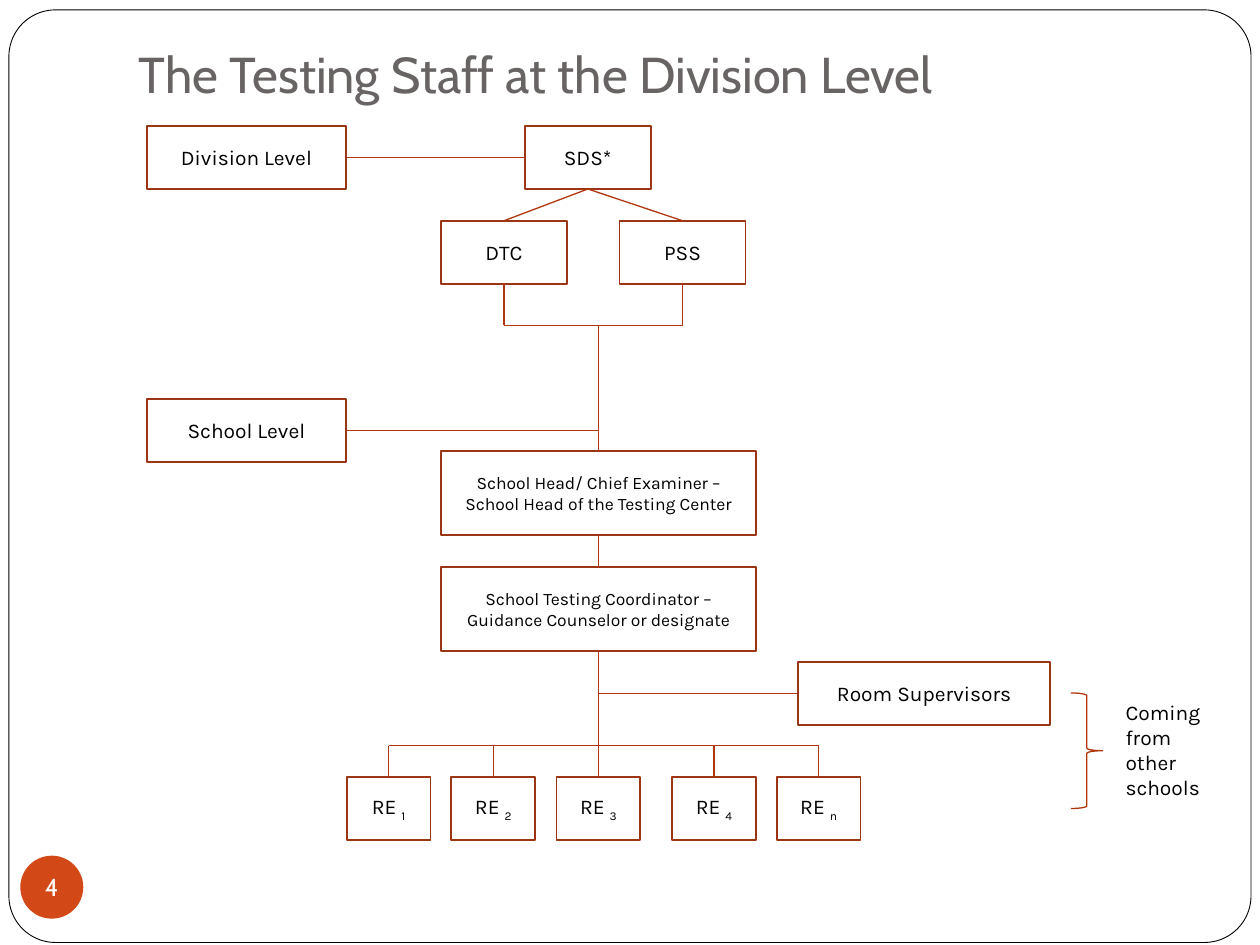
from lxml.etree import SubElement
from pptx import Presentation
from pptx.dml.color import RGBColor
from pptx.enum.shapes import MSO_CONNECTOR, MSO_SHAPE
from pptx.enum.text import MSO_ANCHOR, MSO_AUTO_SIZE, PP_ALIGN
from pptx.oxml.ns import qn
from pptx.util import Cm, Pt

WHITE = RGBColor(0xFF, 0xFF, 0xFF)
BLACK = RGBColor(0x00, 0x00, 0x00)
TITLE_GREY = RGBColor(0x69, 0x64, 0x64)
BADGE_ORANGE = RGBColor(0xD3, 0x48, 0x17)
BOX_BROWN = RGBColor(0x9C, 0x35, 0x11)
LINK_RED = RGBColor(0xB1, 0x36, 0x0B)
HEADING_FONT = "Cabin"
BODY_FONT = "Karla"
BOX_HEIGHT = 1.27


def add_run(paragraph, text, size, font=BODY_FONT, color=BLACK):
    """Append a formatted run to a paragraph."""
    run = paragraph.add_run()
    run.text = text
    run.font.size = Pt(size)
    run.font.name = font
    run.font.color.rgb = color
    return run


def add_outline(slide, preset, left, top, width, height, color, weight):
    """Add an unfilled preset shape with a plain outline."""
    outline = slide.shapes.add_shape(preset, Cm(left), Cm(top), Cm(width), Cm(height))
    outline.shadow.inherit = False
    outline.fill.background()
    outline.line.color.rgb = color
    outline.line.width = Pt(weight)
    return outline


def add_box(slide, left, top, width, height, lines, size=12, subscript=None):
    """Add a chart box with centred lines and an optional subscript."""
    box = add_outline(slide, MSO_SHAPE.RECTANGLE, left, top, width, height, BOX_BROWN, 1)
    frame = box.text_frame
    frame.word_wrap = True
    frame.vertical_anchor = MSO_ANCHOR.MIDDLE
    for index, line in enumerate(lines):
        paragraph = frame.add_paragraph() if index else frame.paragraphs[0]
        paragraph.alignment = PP_ALIGN.CENTER
        add_run(paragraph, line, size)
    if subscript:
        index_run = add_run(paragraph, subscript, size)
        index_run.font._element.set("baseline", "-25000")
    return box


def add_link(slide, start, end):
    """Add a straight link between two points."""
    link = slide.shapes.add_connector(MSO_CONNECTOR.STRAIGHT, *start, *end)
    link.line.color.rgb = LINK_RED
    link.line.width = Pt(0.75)
    SubElement(link._element.spPr, qn("a:effectLst"))


def top_of(box):
    """Return the middle of a box's top edge."""
    return box.left + box.width // 2, box.top


def bottom_of(box):
    """Return the middle of a box's bottom edge."""
    return box.left + box.width // 2, box.top + box.height


def left_of(box):
    """Return the middle of a box's left edge."""
    return box.left, box.top + box.height // 2


def right_of(box):
    """Return the middle of a box's right edge."""
    return box.left + box.width, box.top + box.height // 2


def add_frame(slide):
    """Add the rounded slide frame."""
    frame = add_outline(slide, MSO_SHAPE.ROUNDED_RECTANGLE, 0.18, 0.2, 25.04, 18.8, BLACK, 0.5)
    frame.adjustments[0] = 0.05
    frame.fill.solid()
    frame.fill.fore_color.rgb = WHITE
    slide.shapes._spTree.insert(2, frame._element)


def set_title(slide, text):
    """Place and fill the title placeholder."""
    title = slide.shapes.title
    title.left, title.top, title.width, title.height = Cm(2.54), Cm(0.23), Cm(19.89), Cm(2.1)
    frame = title.text_frame
    frame.auto_size = MSO_AUTO_SIZE.NONE
    frame.vertical_anchor = MSO_ANCHOR.BOTTOM
    frame.margin_bottom = Cm(0.25)
    frame.paragraphs[0].alignment = PP_ALIGN.LEFT
    add_run(frame.paragraphs[0], text, 28.8, HEADING_FONT, TITLE_GREY)


def add_badge(slide, number):
    """Add the round page number badge."""
    badge = slide.shapes.add_shape(MSO_SHAPE.OVAL, Cm(0.41), Cm(17.25), Cm(1.27), Cm(1.27))
    badge.shadow.inherit = False
    badge.fill.solid()
    badge.fill.fore_color.rgb = BADGE_ORANGE
    badge.line.fill.background()
    frame = badge.text_frame
    frame.margin_left = frame.margin_right = frame.margin_top = frame.margin_bottom = 0
    frame.word_wrap = False
    frame.vertical_anchor = MSO_ANCHOR.MIDDLE
    frame.paragraphs[0].alignment = PP_ALIGN.CENTER
    add_run(frame.paragraphs[0], number, 14, HEADING_FONT, WHITE)


def add_division_level(slide, trunk_x):
    """Add the division staff and return the height where the trunk starts."""
    level = add_box(slide, 2.96, 2.54, 4.02, BOX_HEIGHT, ["Division Level"])
    superintendent = add_box(slide, 10.58, 2.54, 2.54, BOX_HEIGHT, ["SDS*"])
    coordinator = add_box(slide, 8.89, 4.45, 2.54, BOX_HEIGHT, ["DTC"])
    supervisor = add_box(slide, 12.49, 4.45, 2.54, BOX_HEIGHT, ["PSS"])
    join_y = Cm(6.56)
    add_link(slide, right_of(level), left_of(superintendent))
    for member in (coordinator, supervisor):
        add_link(slide, bottom_of(superintendent), top_of(member))
        add_link(slide, bottom_of(member), (bottom_of(member)[0], join_y))
        add_link(slide, (bottom_of(member)[0], join_y), (trunk_x, join_y))
    return join_y


def add_examiners(slide, trunk_x, bus_y):
    """Add the room examiners hanging from a shared bus line."""
    lefts = (6.99, 9.1, 11.22, 13.55, 15.66)
    examiners = [
        add_box(slide, left, 15.66, 1.69, BOX_HEIGHT, ["RE "], subscript=index)
        for left, index in zip(lefts, "1234n")
    ]
    stems = [top_of(examiner)[0] for examiner in examiners]
    add_link(slide, (stems[0], bus_y), (stems[-1], bus_y))
    for examiner, stem in zip(examiners, stems):
        add_link(slide, (stem, bus_y), top_of(examiner))


def add_school_level(slide, head, join_y):
    """Add the school staff below the school head."""
    trunk_x = top_of(head)[0]
    bus_y = Cm(15.03)
    level = add_box(slide, 2.96, 8.04, 4.02, BOX_HEIGHT, ["School Level"])
    coordinator = add_box(
        slide, 8.89, 11.43, 6.35, 1.69,
        ["School Testing Coordinator –", "Guidance Counselor or designate"], 10,
    )
    supervisors = add_box(slide, 16.09, 13.34, 5.08, BOX_HEIGHT, ["Room Supervisors"])
    add_link(slide, (trunk_x, join_y), top_of(head))
    add_link(slide, right_of(level), (trunk_x, right_of(level)[1]))
    add_link(slide, bottom_of(head), top_of(coordinator))
    add_link(slide, bottom_of(coordinator), (trunk_x, bus_y))
    add_link(slide, left_of(supervisors), (trunk_x, left_of(supervisors)[1]))
    add_examiners(slide, trunk_x, bus_y)


def add_origin_note(slide):
    """Add the brace and the note on where the room staff come from."""
    add_outline(slide, MSO_SHAPE.RIGHT_BRACE, 21.59, 13.97, 0.64, 2.33, LINK_RED, 0.75)
    note = slide.shapes.add_textbox(Cm(22.44), Cm(13.97), Cm(2.12), Cm(2.32))
    note.text_frame.word_wrap = True
    add_run(note.text_frame.paragraphs[0], "Coming from other schools", 12)


def main():
    """Build the testing staff slide."""
    deck = Presentation()
    deck.slide_width, deck.slide_height = Cm(25.4), Cm(19.05)
    slide = deck.slides.add_slide(deck.slide_layouts[5])
    add_frame(slide)
    set_title(slide, "The Testing Staff at the Division Level")
    add_badge(slide, "4")
    head = add_box(
        slide, 8.89, 9.1, 6.35, 1.69,
        ["School Head/ Chief Examiner – School Head of the Testing Center"], 10,
    )
    join_y = add_division_level(slide, top_of(head)[0])
    add_school_level(slide, head, join_y)
    add_origin_note(slide)
    deck.save("out.pptx")


if __name__ == "__main__":
    main()
